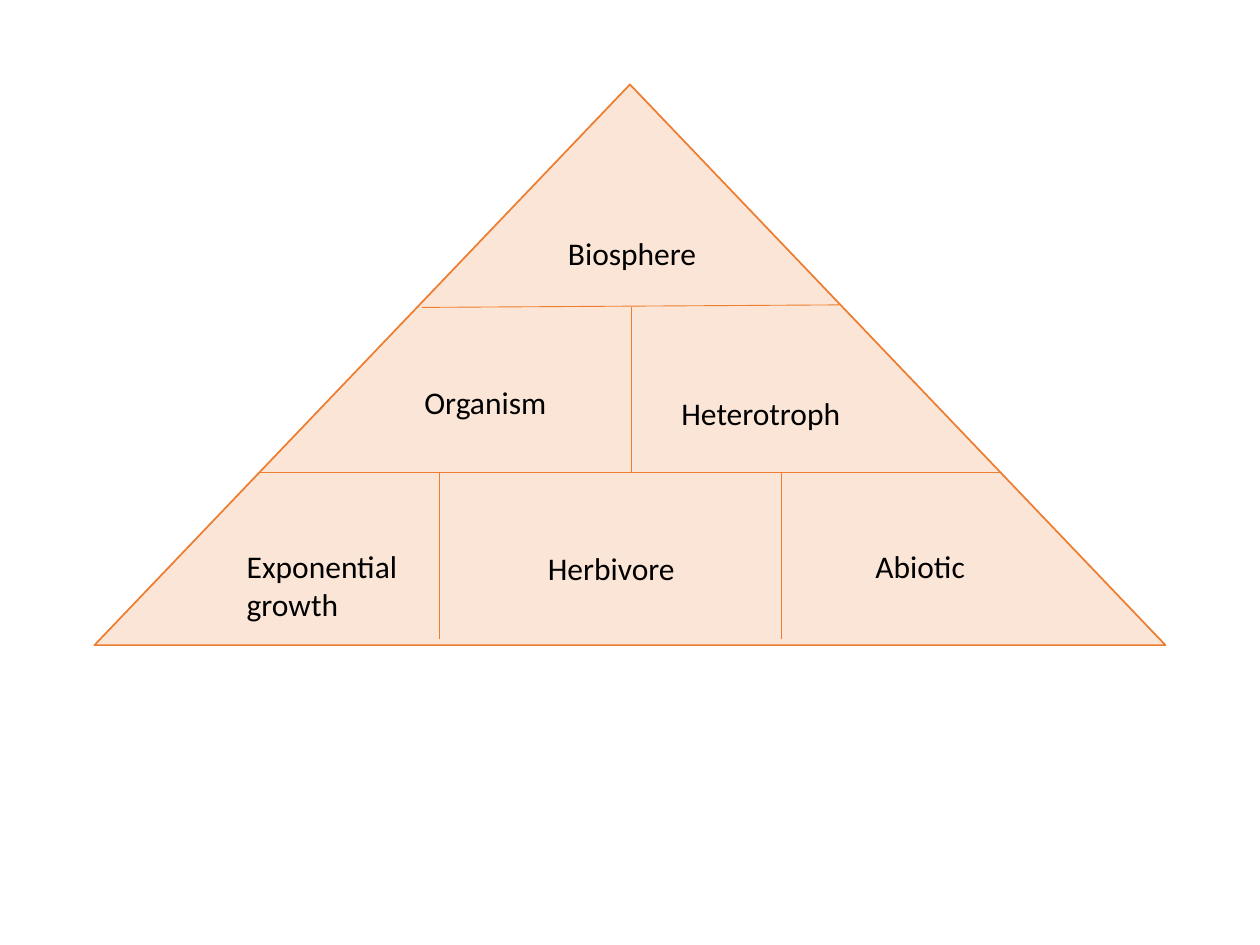
from pptx import Presentation
from pptx import util as u
from pptx.dml.color import RGBColor
from pptx.enum import shapes, text
from pptx.oxml.ns import qn
from lxml import etree

COLORS = {"fill": "FBE5D6", "line": "ED7D31", "text": "000000"}
UPPER_Y, LOWER_Y, DIVIDER_END = 2.44, 3.75, 5.07

presentation = Presentation()
presentation.slide_width = u.Inches(10)
presentation.slide_height = u.Inches(7.5)
slide = presentation.slides.add_slide(presentation.slide_layouts[6])

pyramid = slide.shapes.add_shape(
    shapes.MSO_SHAPE.ISOSCELES_TRIANGLE,
    u.Inches(0.75), u.Inches(0.67), u.Inches(8.5), u.Inches(4.45))
pyramid.shadow.inherit = False
pyramid.fill.solid()
pyramid.fill.fore_color.rgb = RGBColor.from_string(COLORS["fill"])
pyramid.line.color.rgb = RGBColor.from_string(COLORS["line"])
pyramid.line.width = u.Pt(1)

# Two level boundaries, then the dividers inside the levels
dividers = [
    (3.35, UPPER_Y, 6.66, 2.42),
    (2.06, LOWER_Y, 7.95, LOWER_Y),
    (5.01, UPPER_Y, 5.01, LOWER_Y),
    (3.49, LOWER_Y, 3.49, DIVIDER_END),
    (6.2, LOWER_Y, 6.2, DIVIDER_END),
]
for ends in dividers:
    divider = slide.shapes.add_connector(
        shapes.MSO_CONNECTOR.STRAIGHT, *[u.Inches(value) for value in ends])
    divider.line.color.rgb = RGBColor.from_string(COLORS["line"])
    divider.line.width = u.Pt(0.5)
    etree.SubElement(divider._element.spPr, qn("a:effectLst"))

labels = [
    ("Biosphere", 4.41, 1.81, 1.47, 0.4),
    ("Organism", 3.27, 2.99, 1.74, 0.4),
    ("Heterotroph", 5.31, 3.08, 1.77, 0.4),
    ("Exponential growth", 1.86, 4.29, 1.74, 0.71),
    ("Herbivore", 4.25, 4.31, 1.52, 0.4),
    ("Abiotic", 6.85, 4.29, 1.1, 0.4),
]
for wording, *box in labels:
    label = slide.shapes.add_textbox(*[u.Inches(value) for value in box])
    frame = label.text_frame
    frame.word_wrap = True
    frame.auto_size = text.MSO_AUTO_SIZE.SHAPE_TO_FIT_TEXT
    paragraph = frame.paragraphs[0]
    paragraph.text = wording
    paragraph.font.name = "Calibri"
    paragraph.font.size = u.Pt(18)
    paragraph.font.color.rgb = RGBColor.from_string(COLORS["text"])

presentation.save("out.pptx")
